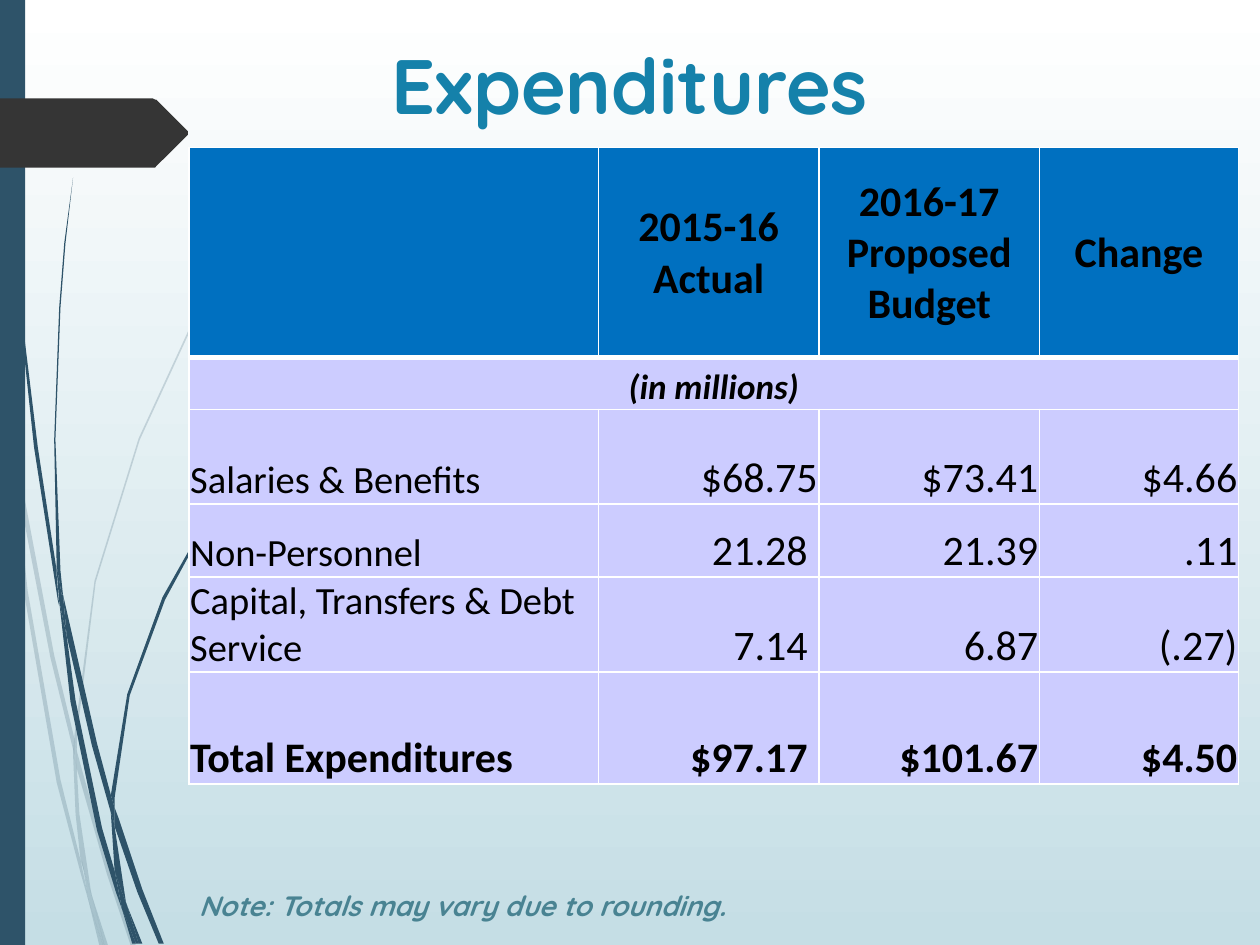
from dataclasses import dataclass
from lxml import etree
from pptx import Presentation
from pptx.dml.color import RGBColor
from pptx.enum.shapes import MSO_SHAPE
from pptx.enum.text import MSO_ANCHOR, MSO_AUTO_SIZE, PP_ALIGN
from pptx.oxml.ns import qn
from pptx.util import Emu, Pt

LEFT, MID, RIGHT = PP_ALIGN.LEFT, PP_ALIGN.CENTER, PP_ALIGN.RIGHT
TOP, CENTER, BOTTOM = MSO_ANCHOR.TOP, MSO_ANCHOR.MIDDLE, MSO_ANCHOR.BOTTOM
RECT = MSO_SHAPE.RECTANGLE
FIXED = MSO_AUTO_SIZE.NONE
SCALE = 9144
WIDE, HIGH = 1000, 750


@dataclass(frozen=True)
class Theme:
    stem: str = "2E5369"
    tag: str = "353535"
    title: str = "1581AA"
    note: str = "498392"
    head: str = "0070C0"
    body: str = "CCCCFF"
    ink: str = "000000"
    line: str = "FFFFFF"
    sky: tuple = ("FFFFFF", "C5DEE5")
    show: str = "Quicksand"
    text: str = "Calibri"
    huge: int = 44
    big: int = 24
    label: int = 22
    unit: int = 20
    small: int = 16


@dataclass(frozen=True)
class Tuft:
    alpha: int
    blades: tuple


@dataclass(frozen=True)
class Row:
    high: int
    cells: tuple
    size: int
    bold: bool = False
    pad: int = 1


T = Theme()
PALE = Tuft(20, (
    ((8, 350), (6, 322), (0, 282), (0, 299), (7, 344)),
    ((40, 522), (59, 599), (59, 586), (43, 520), (10, 345), (12, 376)),
    ((64, 607), (61, 596), (61, 610), (85, 694), (104, 751), (108, 751), (88, 692)),
    ((83, 751), (86, 751), (73, 711)),
    ((64, 683), (48, 619), (22, 469), (12, 376), (8, 350), (19, 470),
     (45, 621), (64, 693), (70, 714), (69, 707)),
    ((58, 599), (60, 646), (64, 683), (67, 692), (73, 711), (72, 706),
     (63, 646), (61, 610), (61, 608)),
    ((61, 584), (76, 462), (111, 349), (159, 245), (187, 198), (201, 175),
     (217, 154), (217, 153), (201, 175), (186, 197), (158, 244), (110, 348),
     (75, 461), (59, 584), (59, 586), (61, 596)),
    ((70, 714), (79, 751), (82, 751)),
    ((61, 608), (61, 610), (61, 596), (59, 586), (58, 599)),
    ((67, 692), (65, 683), (69, 707), (70, 714), (82, 751), (83, 751), (73, 711)),
))
DARK = Tuft(100, (
    ((5, 110), (14, 233), (27, 355), (46, 477), (47, 481), (45, 457),
     (45, 453), (30, 355), (15, 232), (6, 109), (4, 48), (3, 0), (2, 0), (3, 48)),
    ((73, 592), (88, 645), (88, 633), (88, 631), (77, 590), (50, 472), (53, 505)),
    ((94, 649), (91, 641), (91, 656), (109, 708), (126, 749), (130, 749), (113, 706)),
    ((91, 691), (81, 657), (60, 556), (53, 505), (47, 477), (56, 557),
     (77, 659), (92, 708), (97, 722), (96, 717)),
    ((50, 472), (48, 453), (44, 349), (48, 244), (52, 193), (58, 141),
     (51, 193), (47, 244), (43, 349), (45, 449), (49, 472)),
    ((110, 749), (113, 749), (101, 719)),
    ((47, 477), (53, 505), (50, 472), (49, 472), (45, 449), (45, 453)),
    ((91, 633), (103, 552), (131, 476), (169, 406), (191, 374), (203, 359),
     (216, 344), (215, 344), (203, 358), (191, 373), (168, 405), (129, 474),
     (101, 551), (88, 631), (91, 641)),
    ((97, 722), (105, 749), (108, 749)),
    ((88, 645), (91, 691), (96, 706), (101, 719), (100, 716), (91, 656), (90, 651)),
    ((88, 645), (90, 651), (91, 656), (91, 641), (88, 631), (88, 633)),
    ((96, 706), (91, 691), (96, 717), (97, 722), (108, 749), (110, 749), (101, 719)),
))
TAG = ((149, 107), (124, 132), (123, 133), (121, 133), (112, 133), (0, 133),
       (0, 78), (112, 78), (121, 78), (123, 79), (124, 79), (149, 104))
COLS = (325, 175, 175, 158)
HEAD = Row(167, ("", "2015-16 Actual", "2016-17 Proposed Budget", "Change"), T.big, True)
UNIT = Row(41, ("(in millions)", "", "", ""), T.unit, True)
ROWS = (
    HEAD,
    UNIT,
    Row(75, ("Salaries & Benefits", "$68.75", "$73.41", "$4.66"), T.label),
    Row(58, ("Non-Personnel", "21.28", "21.39", ".11"), T.label, pad=9),
    Row(75, ("Capital, Transfers & Debt Service", "7.14", "6.87", "(.27)"), T.label, pad=9),
    Row(89, ("Total Expenditures", "$97.17", "$101.67", "$4.50"), T.big, True, 9),
)


def px(num: int) -> Emu:
    return Emu(num * SCALE)


def rgb(code: str) -> RGBColor:
    return RGBColor.from_string(code)


def style(para, face: str, size: int, tint: str, bold: bool, slant: bool = False) -> None:
    font = para.font
    font.name, font.size, font.bold, font.italic = face, Pt(size), bold, slant
    font.color.rgb = rgb(tint)


def paint(shape, tint: str, alpha: int = 100) -> None:
    shape.shadow.inherit = False
    shape.fill.solid()
    shape.fill.fore_color.rgb = rgb(tint)
    shape.line.fill.background()
    if alpha < 100:
        node = shape.fill._xPr.find(f"{qn('a:solidFill')}/{qn('a:srgbClr')}")
        etree.SubElement(node, qn("a:alpha"), val=str(alpha * 1000))


def draw(slide, dots: tuple, tint: str, alpha: int = 100) -> None:
    pen = slide.shapes.build_freeform(*dots[0], scale=SCALE)
    pen.add_line_segments(dots[1:], close=True)
    paint(pen.convert_to_shape(), tint, alpha)


def edge(cell, side: str, width: int) -> None:
    line = etree.SubElement(cell._tc.get_or_add_tcPr(), qn(f"a:{side}"), w=str(Pt(width)))
    fill = etree.SubElement(line, qn("a:solidFill"))
    etree.SubElement(fill, qn("a:srgbClr"), val=T.line)


def fill(cell, row: Row, col: int) -> None:
    head, unit = row is HEAD, row is UNIT
    for side in ("lnL", "lnR", "lnT", "lnB"):
        thick = (head and side == "lnB") or (unit and side == "lnT")
        edge(cell, side, 3 if thick else 1)
    cell.fill.solid()
    cell.fill.fore_color.rgb = rgb(T.head if head else T.body)
    cell.margin_left = cell.margin_top = px(1)
    cell.margin_right = px(row.pad if col == 1 else 1)
    cell.margin_bottom = 0
    cell.vertical_anchor = CENTER if head else BOTTOM
    if row.cells[col]:
        cell.text = row.cells[col]
        para = cell.text_frame.paragraphs[0]
        para.alignment = MID if head or unit else RIGHT if col else LEFT
        size = row.size if unit or not col else T.big
        style(para, T.text, size, T.ink, row.bold, unit)


def grid(slide) -> None:
    box = (150, 117, sum(COLS), sum(r.high for r in ROWS))
    table = slide.shapes.add_table(len(ROWS), len(COLS), *map(px, box)).table
    table.horz_banding = False
    for col, wide in zip(table.columns, COLS):
        col.width = px(wide)
    for i, row in enumerate(ROWS):
        table.rows[i].height = px(row.high)
        for j in range(len(COLS)):
            fill(table.cell(i, j), row, j)
    at = ROWS.index(UNIT)
    table.cell(at, 0).merge(table.cell(at, len(COLS) - 1))


def main() -> None:
    deck = Presentation()
    deck.slide_width, deck.slide_height = px(WIDE), px(HIGH)
    slide = deck.slides.add_slide(deck.slide_layouts[5])
    back = slide.background.fill
    back.gradient()
    back.gradient_angle = 270
    for stop, tint, spot in zip(back.gradient_stops, T.sky, (0, 1)):
        stop.color.rgb = rgb(tint)
        stop.position = spot

    for tuft in (PALE, DARK):
        for blade in tuft.blades:
            draw(slide, blade, T.stem, tuft.alpha)
    paint(slide.shapes.add_shape(RECT, 0, 0, px(20), px(HIGH)), T.stem)
    draw(slide, TAG, T.tag)

    title = slide.shapes.title
    title.left, title.top, title.width, title.height = map(px, (0, 25, WIDE, 62))
    frame = title.text_frame
    frame.text = "Expenditures"
    frame.auto_size, frame.vertical_anchor = FIXED, TOP
    frame.paragraphs[0].alignment = MID
    style(frame.paragraphs[0], T.show, T.huge, T.title, True)

    grid(slide)
    note = slide.shapes.add_textbox(*map(px, (148, 700, 448, 37))).text_frame
    note.word_wrap = False
    note.text = "Note: Totals may vary due to rounding."
    style(note.paragraphs[0], T.show, T.small, T.note, True, True)
    deck.save("out.pptx")


if __name__ == "__main__":
    main()
